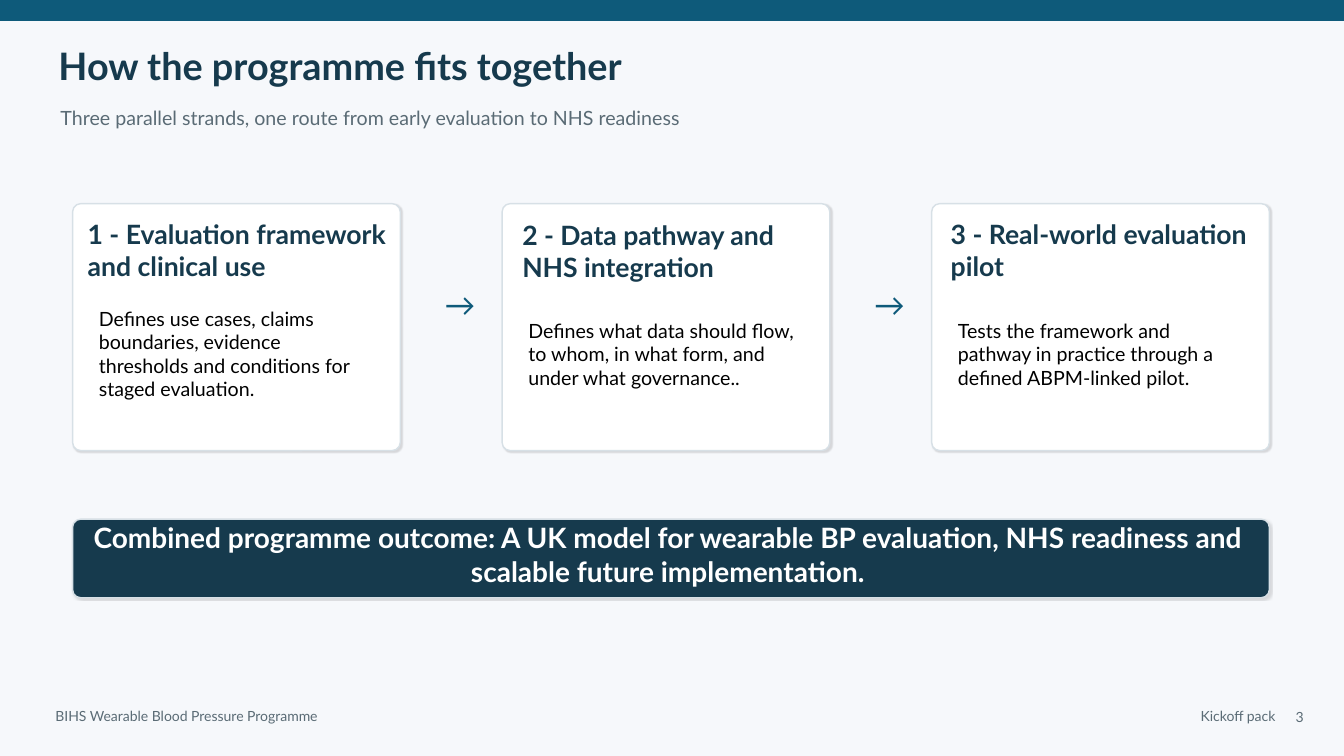
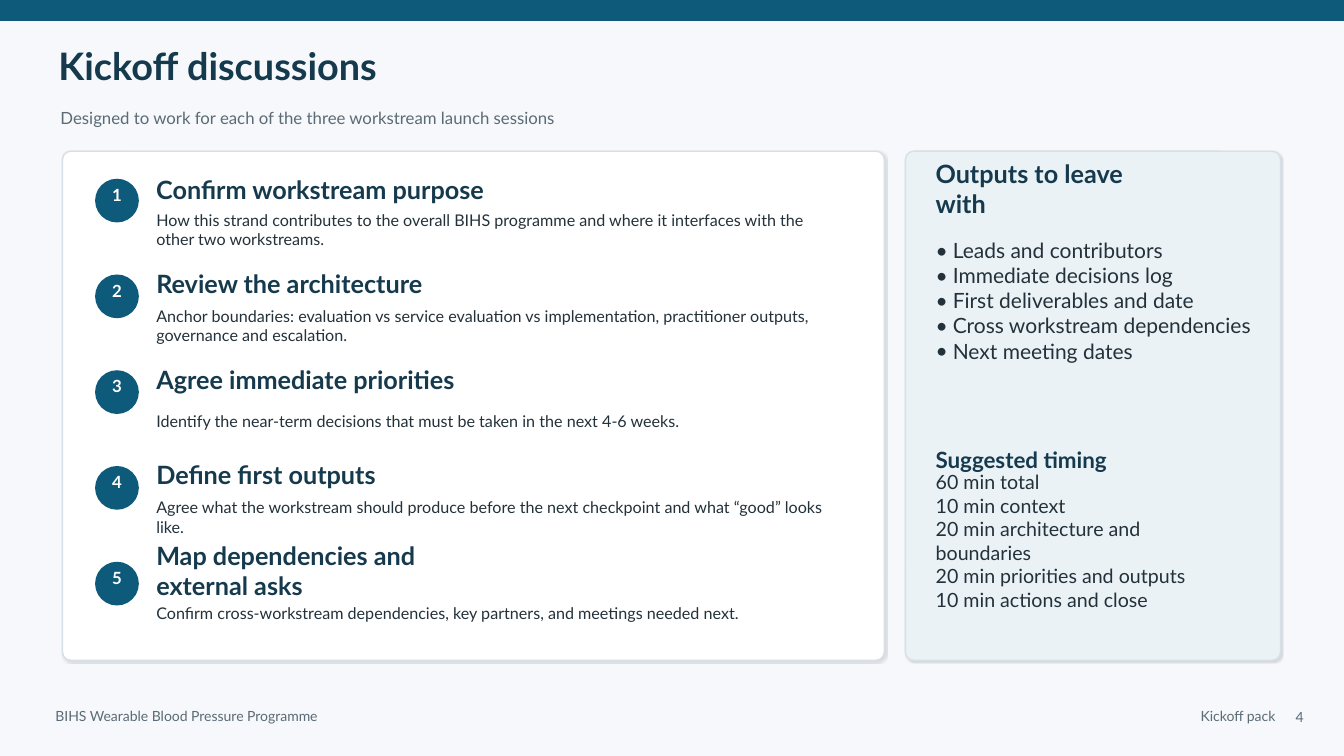
from dataclasses import dataclass

from lxml.etree import SubElement as Sub
from pptx import Presentation
from pptx.dml.color import RGBColor as Rgb
from pptx.enum.shapes import MSO_SHAPE as Kind
from pptx.enum.text import MSO_ANCHOR as Anchor
from pptx.enum.text import MSO_AUTO_SIZE as Fit
from pptx.enum.text import PP_ALIGN as Align
from pptx.oxml.ns import qn
from pptx.util import Pt

SCALE = 9144


@dataclass(frozen=True)
class Look:
    size: float
    color: str
    bold: bool = False


@dataclass(frozen=True)
class Theme:
    font: str = "Lato"
    back: str = "F6F8FB"
    teal: str = "0E5A7A"
    navy: str = "163A4D"
    edge: str = "D7E0E6"
    white: str = "FFFFFF"
    mist: str = "EAF2F6"
    title: Look = Look(27, "163A4D", True)
    sub: Look = Look(14, "5A6B75")
    small: Look = Look(12, "5A6B75")
    foot: Look = Look(10, "5A6B75")
    card: Look = Look(19, "163A4D", True)
    text: Look = Look(14, "000000")
    arrow: Look = Look(22, "0E5A7A")
    banner: Look = Look(20, "FFFFFF", True)
    badge: Look = Look(12, "FFFFFF", True)
    head: Look = Look(18, "163A4D", True)
    note: Look = Look(11.5, "23313A")
    item: Look = Look(15, "23313A")
    label: Look = Look(16, "163A4D", True)
    time: Look = Look(14, "23313A")


T = Theme()

STRANDS = [
    ("1 - Evaluation framework and clinical use", (87, 227, 310, 42),
     "Defines use cases, claims boundaries, evidence thresholds and "
     "conditions for staged evaluation.", 325),
    ("2 - Data pathway and NHS integration", (518, 228, 272, 42),
     "Defines what data should flow, to whom, in what form, and under "
     "what governance..", 325),
    ("3 - Real-world evaluation pilot", (943, 227, 296, 42),
     "Tests the framework and pathway in practice through a defined "
     "ABPM-linked pilot.", 335),
]
TOPICS = [
    ("Confirm workstream purpose", (456, 25),
     "How this strand contributes to the overall BIHS programme and where "
     "it interfaces with the other two workstreams."),
    ("Review the architecture", (305, 22),
     "Anchor boundaries: evaluation vs service evaluation vs "
     "implementation, practitioner outputs, governance and escalation."),
    ("Agree immediate priorities", (305, 22),
     "Identify the near-term decisions that must be taken in the next "
     "4-6 weeks."),
    ("Define first outputs", (305, 22),
     "Agree what the workstream should produce before the next checkpoint "
     "and what “good” looks like."),
    ("Map dependencies and external asks", (305, 22),
     "Confirm cross-workstream dependencies, key partners, and meetings "
     "needed next."),
]
OUTPUTS = ["Leads and contributors", "Immediate decisions log",
           "First deliverables and date", "Cross workstream dependencies",
           "Next meeting dates"]
TIMES = ["60 min total", "10 min context",
         "20 min architecture and boundaries",
         "20 min priorities and outputs", "10 min actions and close"]


def px(num):
    return int(num * SCALE)


def apply(obj, vals):
    for key, val in vals.items():
        setattr(obj, key, val)


def drop(shape):
    shape.element.getparent().remove(shape.element)


def bullet(para, mark):
    props = para._p.get_or_add_pPr()
    gap = px(17) if mark else 0
    props.set("marL", str(gap))
    props.set("indent", str(-gap))
    if mark:
        Sub(props, qn("a:buFont")).set("typeface", T.font)
        Sub(props, qn("a:buChar")).set("char", "•")
    else:
        Sub(props, qn("a:buNone"))


def write(shape, lines, look, align=Align.LEFT, mark=False, inset=(0, 0, 0, 0)):
    left, top, right, foot = map(px, inset)
    frame = shape.text_frame
    apply(frame, {"word_wrap": True, "auto_size": Fit.NONE,
                  "vertical_anchor": Anchor.MIDDLE,
                  "margin_left": left, "margin_top": top,
                  "margin_right": right, "margin_bottom": foot})
    lines = [lines] if isinstance(lines, str) else lines
    for num, line in enumerate(lines):
        para = frame.add_paragraph() if num else frame.paragraphs[0]
        apply(para, {"alignment": align, "space_before": Pt(0)})
        bullet(para, mark)
        run = para.add_run()
        run.text = line
        apply(run.font, {"name": T.font, "size": Pt(look.size),
                         "bold": look.bold})
        run.font.color.rgb = Rgb.from_string(look.color)


def text(slide, at, lines, look, align=Align.LEFT):
    box = slide.shapes.add_textbox(*map(px, at))
    write(box, lines, look, align)
    return box


def fill(slide, idx, at, lines, look, mark=False):
    hold = slide.placeholders[idx]
    apply(hold, dict(zip(("left", "top", "width", "height"), map(px, at))))
    slide.shapes.element.append(hold.element)
    write(hold, lines, look, mark=mark)


def block(slide, kind, at, color, edge):
    shape = slide.shapes.add_shape(kind, *map(px, at))
    shape.shadow.inherit = False
    shape.fill.solid()
    shape.fill.fore_color.rgb = Rgb.from_string(color)
    shape.line.color.rgb = Rgb.from_string(edge)
    shape.line.width = Pt(1)
    return shape


def panel(slide, at, color):
    shape = block(slide, Kind.ROUNDED_RECTANGLE, at, color, T.edge)
    shape.adjustments[0] = round(8 / min(at[2:]), 3)
    glow = Sub(shape.element.spPr.find(qn("a:effectLst")), qn("a:outerShdw"),
               blurRad="12700", dist="15240", dir="2700000", algn="ctr",
               rotWithShape="0")
    tint = Sub(glow, qn("a:srgbClr"), val="000000")
    Sub(tint, qn("a:alpha"), val="12000")
    return shape


def dress(layout, slide):
    for hold in list(layout.placeholders):
        if hold.placeholder_format.idx >= 10:
            drop(hold)
    parts = [
        block(slide, Kind.RECTANGLE, (0, 0, 1333, 20), T.teal, T.teal),
        text(slide, (55, 700, 460, 20),
             "BIHS Wearable Blood Pressure Programme", T.foot),
        text(slide, (1110, 700, 155, 20), "Kickoff pack", T.foot, Align.RIGHT),
    ]
    for part in parts:
        layout.shapes.element.append(part.element)


def top(slide, title, sub, look, page):
    fill(slide, 0, (58, 48, 860, 34), title, T.title)
    fill(slide, 1, (60, 106, 1080, 22), sub, look)
    text(slide, (1268, 701, 25, 20), page, T.foot, Align.RIGHT)


def strands(slide):
    top(slide, "How the programme fits together",
        "Three parallel strands, one route from early evaluation to NHS "
        "readiness", T.sub, "3")
    for num, (head, at, note, wide) in enumerate(STRANDS):
        step = 426 * num
        panel(slide, (72 + step, 202, wide, 245), T.white)
        text(slide, at, head, T.card)
        text(slide, (98 + step, 306, wide - 53, 90), note, T.text)
        if num:
            text(slide, (15 + step, 293, 30, 18), "→", T.arrow, Align.CENTER)
    bar = panel(slide, (72, 515, 1187, 78), T.navy)
    write(bar, "Combined programme outcome: A UK model for wearable BP "
          "evaluation, NHS readiness and scalable future implementation.",
          T.banner, Align.CENTER, inset=(13, 0, 19, 8))


def topics(slide):
    top(slide, "Kickoff discussions",
        "Designed to work for each of the three workstream launch sessions",
        T.small, "4")
    panel(slide, (62, 150, 815, 505), T.white)
    panel(slide, (898, 150, 372, 505), T.mist)
    for num, (head, size, note) in enumerate(TOPICS):
        row = 175 + 95 * num
        disc = block(slide, Kind.OVAL, (95, row + 3, 42, 42), T.teal, T.teal)
        write(disc, str(num + 1), T.badge, Align.CENTER, inset=(0, 0, 0, 12))
        text(slide, (155, row, *size), head, T.head)
        text(slide, (155, row + 34, 665, 38), note, T.note)
    text(slide, (928, 176, 240, 22), "Outputs to leave with", T.head)
    fill(slide, 2, (928, 222, 326, 152), OUTPUTS, T.item, mark=True)
    text(slide, (928, 446, 210, 20), "Suggested timing", T.label)
    fill(slide, 4, (928, 484, 300, 105), TIMES, T.time)


def main():
    deck = Presentation()
    apply(deck, {"slide_width": px(1333), "slide_height": px(750)})
    back = deck.slide_master.background.fill
    back.solid()
    back.fore_color.rgb = Rgb.from_string(T.back)
    layout = deck.slide_layouts[4]
    for num, build in enumerate((strands, topics)):
        slide = deck.slides.add_slide(layout)
        if not num:
            dress(layout, slide)
        build(slide)
        for hold in list(slide.placeholders):
            if not hold.text_frame.text:
                drop(hold)
    deck.save("out.pptx")


if __name__ == "__main__":
    main()
